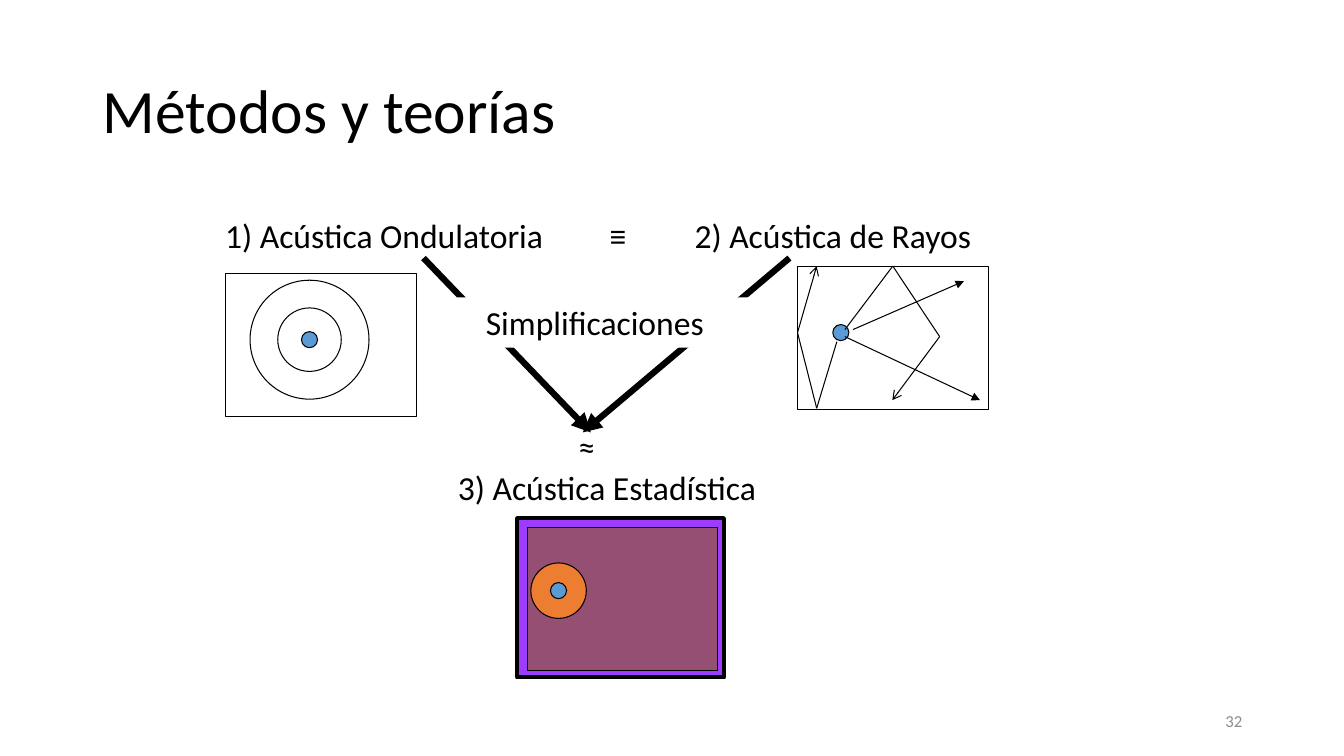
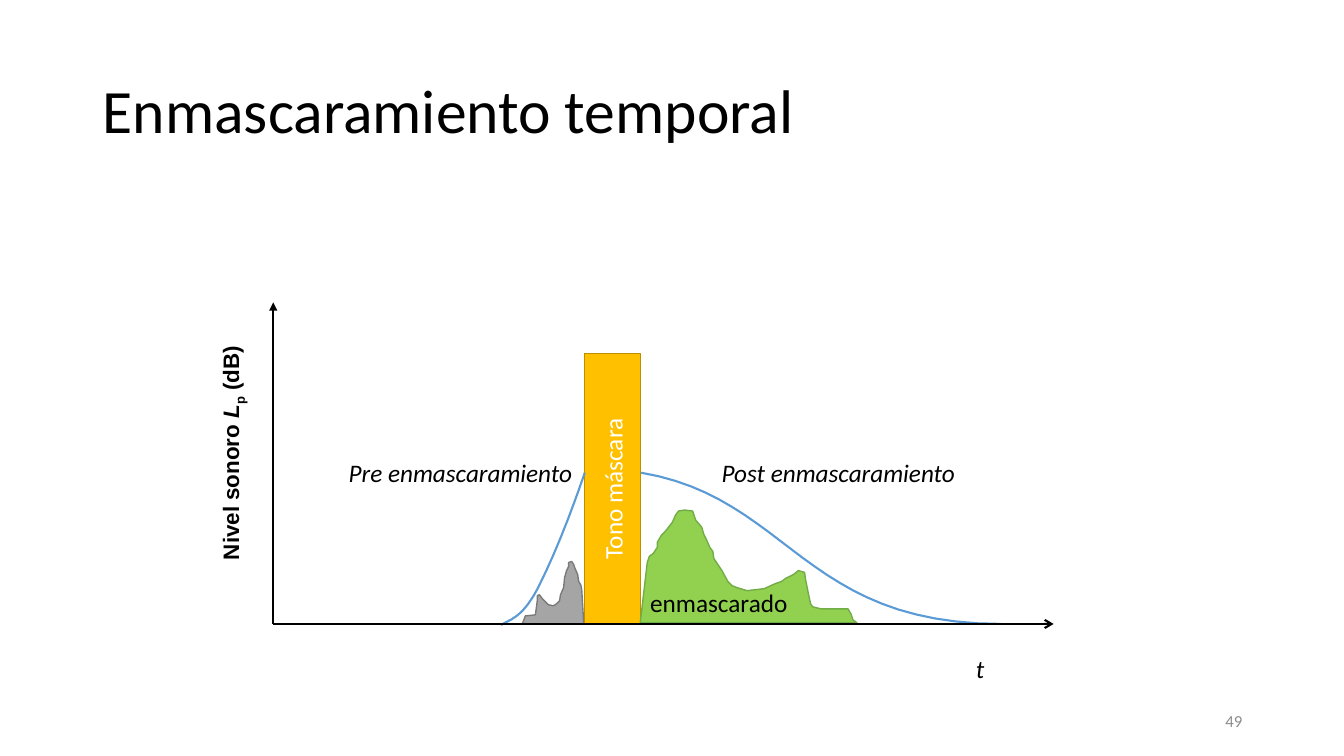
from dataclasses import dataclass

from lxml.etree import SubElement
from pptx import Presentation
from pptx.dml.color import RGBColor as RGB
from pptx.enum.shapes import MSO_CONNECTOR as CONN, MSO_SHAPE as SHAPE
from pptx.enum.text import MSO_ANCHOR as ANCHOR, PP_ALIGN as ALIGN
from pptx.oxml.ns import qn
from pptx.util import Inches, Pt


@dataclass(frozen=True)
class Theme:
    """Colours, fonts and type sizes shared by the slides."""
    black: str = "000000"
    white: str = "FFFFFF"
    muted: str = "8C8C8C"
    blue: str = "5B9BD5"
    purple: str = "9D3BFF"
    plum: str = "954F72"
    orange: str = "ED7D31"
    amber: str = "FFC000"
    amber_edge: str = "BD8E00"
    grey: str = "A5A5A5"
    grey_edge: str = "7A7A7A"
    green: str = "92D050"
    green_edge: str = "70AD47"
    font: str = "Calibri"
    axis_font: str = "Arial"
    title: int = 44
    heading: int = 24
    label: int = 18
    axis: int = 16
    footer: int = 12
    thin: float = 0.75
    edge: float = 1
    curve: float = 1.5
    frame: float = 3
    heavy: float = 4.5


T = Theme()
BOX = (1.89, 1.42)
DOT = 0.16

GREY_SOUND = [
    (5.77, 5.85), (5.76, 5.8), (5.74, 5.77), (5.73, 5.7), (5.7, 5.63),
    (5.69, 5.6), (5.67, 5.57), (5.64, 5.58), (5.64, 5.62), (5.62, 5.66),
    (5.6, 5.73), (5.59, 5.83), (5.56, 5.9), (5.55, 5.96), (5.52, 5.99),
    (5.49, 6.01), (5.44, 6), (5.41, 5.97), (5.38, 5.94), (5.35, 5.9),
    (5.33, 5.91), (5.33, 5.95), (5.32, 6.03), (5.31, 6.1), (5.21, 6.11),
    (5.2, 6.14), (5.18, 6.19), (5.79, 6.19)]
GREEN_SOUND = [
    (6.42, 5.58), (6.44, 5.52), (6.48, 5.49), (6.52, 5.43), (6.52, 5.38),
    (6.56, 5.31), (6.6, 5.27), (6.67, 5.18), (6.7, 5.11), (6.73, 5.07),
    (6.79, 5.06), (6.87, 5.07), (6.9, 5.16), (6.96, 5.23), (6.98, 5.3),
    (7.01, 5.36), (7.04, 5.43), (7.07, 5.47), (7.08, 5.54), (7.16, 5.66),
    (7.22, 5.77), (7.26, 5.81), (7.31, 5.83), (7.41, 5.86), (7.58, 5.84),
    (7.69, 5.79), (7.75, 5.77), (7.79, 5.74), (7.87, 5.7), (7.92, 5.66),
    (7.98, 5.68), (7.99, 5.75), (8.02, 5.9), (8.04, 5.99), (8.06, 6.02),
    (8.14, 6.04), (8.41, 6.04), (8.44, 6.09), (8.46, 6.15), (8.5, 6.18),
    (6.35, 6.18)]
PRE_CURVE = [(5.8, 4.69), (5.63, 5.19), (5.45, 5.62), (5.31, 5.88),
             (5.17, 6.13), (5.05, 6.15), (4.97, 6.2)]
POST_CURVE = [(6.36, 4.69), (7.83, 4.94), (7.97, 6.19), (9.93, 6.19)]


def assign(obj, values):
    """Set each named attribute on an object."""
    for name, value in values.items():
        setattr(obj, name, value)


def write(tf, runs, size, color=T.black, font=T.font, align=ALIGN.LEFT,
          anchor=ANCHOR.TOP, spacing=None, **fmt):
    """Write one paragraph of (text, format) runs, or a plain string."""
    assign(tf, {"word_wrap": True, "vertical_anchor": anchor})
    p = tf.paragraphs[0]
    assign(p, {"alignment": align, "line_spacing": spacing})
    for text, extra in [(runs, {})] if isinstance(runs, str) else runs:
        r = p.add_run()
        r.text = text
        values = {"name": font, "size": Pt(size), **fmt, **extra}
        baseline = values.pop("baseline", None)
        assign(r.font, values)
        r.font.color.rgb = RGB.from_string(color)
        if baseline:
            r._r.get_or_add_rPr().set("baseline", str(baseline))


def text(slide, at, runs, size, **fmt):
    """Add a text box."""
    sp = slide.shapes.add_textbox(*map(Inches, at))
    write(sp.text_frame, runs, size, **fmt)
    return sp


def paint(sp, fill=None, line=None, width=T.thin):
    """Give a shape its fill and outline, or none, and no shadow."""
    sp.shadow.inherit = False
    for part, color in ((sp.fill, fill), (sp.line.fill, line)):
        if color:
            part.solid()
            part.fore_color.rgb = RGB.from_string(color)
        else:
            part.background()
    if line:
        sp.line.width = Pt(width)
    return sp


def rect(slide, at, fill=None, line=T.black, width=T.thin):
    """Add a rectangle."""
    sp = slide.shapes.add_shape(SHAPE.RECTANGLE, *map(Inches, at))
    return paint(sp, fill, line, width)


def circle(slide, center, diameter, fill=None):
    """Add a thin-lined circle around a centre."""
    corner = [Inches(c - diameter / 2) for c in center]
    sp = slide.shapes.add_shape(SHAPE.OVAL, *corner, *[Inches(diameter)] * 2)
    return paint(sp, fill, T.black)


def line(slide, start, end, tail=None, width=T.thin):
    """Add a straight connector with an optional arrowhead at its end."""
    cx = slide.shapes.add_connector(CONN.STRAIGHT, *map(Inches, start + end))
    cx.line.color.rgb = RGB.from_string(T.black)
    cx.line.width = Pt(width)
    if tail:
        SubElement(cx.line._ln, qn("a:tailEnd"), type=tail)
    SubElement(cx._element.spPr, qn("a:effectLst"))
    return cx


def trace(slide, points, tail):
    """Chain connectors through points and put an arrowhead on the last."""
    last = len(points) - 2
    return [line(slide, a, b, tail if i == last else None)
            for i, (a, b) in enumerate(zip(points, points[1:]))]


def bezier(points, steps=24):
    """Sample a chain of cubic curves that share their end points."""
    out = [points[0]]
    for i in range(0, len(points) - 1, 3):
        for n in range(1, steps + 1):
            t = n / steps
            u = 1 - t
            weights = (u ** 3, 3 * u * u * t, 3 * u * t * t, t ** 3)
            out.append(tuple(sum(w * c for w, c in zip(weights, axis))
                             for axis in zip(*points[i:i + 4])))
    return out


def outline(slide, points, fill=None, line=T.blue, width=T.curve):
    """Add a freeform through points, closed when it is filled."""
    grid = [(x * 1000, y * 1000) for x, y in points]
    builder = slide.shapes.build_freeform(*grid[0], scale=Inches(1) / 1000)
    builder.add_line_segments(grid[1:], close=bool(fill))
    return paint(builder.convert_to_shape(), fill, line, width)


def new_slide(prs, title, number):
    """Add a slide with its title and page number."""
    slide = prs.slides.add_slide(prs.slide_layouts[5])
    sp = slide.shapes.title
    assign(sp, dict(zip(("left", "top", "width", "height"),
                        map(Inches, (0.92, 0.4, 11.5, 1.45)))))
    write(sp.text_frame, title, T.title, anchor=ANCHOR.MIDDLE, spacing=0.9)
    text(slide, (9.42, 6.95, 3, 0.4), number, T.footer, color=T.muted,
         align=ALIGN.RIGHT, anchor=ANCHOR.MIDDLE)
    return slide


def draw_waves(slide):
    """Draw the wave fronts around a source."""
    rect(slide, (2.24, 2.71, *BOX))
    for diameter, fill in ((1.18, None), (0.63, None), (DOT, T.blue)):
        circle(slide, (3.07, 3.37), diameter, fill)


def draw_rays(slide):
    """Draw the direct and reflected rays of a source."""
    box = rect(slide, (7.91, 2.64, *BOX))
    circle(slide, (8.34, 3.3), DOT, T.blue)
    up, down, _ = trace(slide, [(8.38, 3.27), (8.85, 2.64), (9.32, 3.34),
                                (8.85, 3.97)], "arrow")
    up.end_connect(box, 0)
    down.begin_connect(box, 0)
    trace(slide, [(8.3, 3.39), (8.1, 4.05), (7.91, 3.3), (8.1, 2.64)], "arrow")
    line(slide, (8.38, 3.34), (9.72, 3.97), "triangle")
    line(slide, (8.46, 3.27), (9.56, 2.79), "triangle")


def draw_statistics(slide):
    """Draw the diffuse field around a source."""
    rect(slide, (5.13, 5.14, 2.05, 1.58), T.purple, width=T.frame)
    rect(slide, (5.23, 5.23, *BOX), T.plum)
    for diameter, fill in ((0.55, T.orange), (DOT, T.blue)):
        circle(slide, (5.54, 5.86), diameter, fill)


def methods_slide(prs):
    """Build the slide on methods and theories."""
    slide = new_slide(prs, "Métodos y teorías", "32")
    for start, end in (((4.2, 2.56), (5.86, 4.29)),
                       ((7.83, 2.56), (5.78, 4.29))):
        line(slide, start, end, "triangle", T.heavy)
    sp = rect(slide, (4.13, 2.95, 3.54, 0.5), T.white, None)
    write(sp.text_frame, "Simplificaciones", T.heading, align=ALIGN.CENTER)
    for left, top, width, label in (
            (1.84, 2.08, 3.94, "1) Acústica Ondulatoria"),
            (6.49, 2.08, 3.54, "2) Acústica de Rayos"),
            (4.13, 4.58, 3.78, "3) Acústica Estadística"),
            (4.36, 2.08, 3.54, "≡"),
            (4.05, 4.18, 3.54, "≈")):
        text(slide, (left, top, width, 0.5), label, T.heading,
             align=ALIGN.CENTER)
    draw_waves(slide)
    draw_rays(slide)
    draw_statistics(slide)


def masking_slide(prs):
    """Build the slide on temporal masking."""
    slide = new_slide(prs, "Enmascaramiento temporal", "49")
    outline(slide, GREY_SOUND, T.grey, T.grey_edge, T.edge)
    mask = rect(slide, (5.8, 3.51, 0.55, 2.68), T.amber, T.amber_edge, T.edge)
    write(mask.text_frame, "Tono máscara", T.label, color=T.white,
          align=ALIGN.CENTER, anchor=ANCHOR.MIDDLE)
    mask.text_frame._txBody.bodyPr.set("vert", "vert270")
    for points in (PRE_CURVE, POST_CURVE):
        outline(slide, bezier(points))
    masked = outline(slide, GREEN_SOUND, T.green, T.green_edge, T.edge)
    write(masked.text_frame, "enmascarado", T.label, anchor=ANCHOR.BOTTOM)
    origin = (2.71, 6.19)
    line(slide, origin, (2.71, 3), "triangle", T.curve)
    line(slide, origin, (10.45, 6.19), "arrow", T.curve)
    for left, top, width, label in (
            (9.58, 6.43, 1.57, "t"),
            (7.06, 4.49, 2.88, "Post enmascaramiento"),
            (3.36, 4.49, 2.88, "Pre enmascaramiento")):
        text(slide, (left, top, width, 0.4), label, T.label, italic=True)
    level = text(slide, (0.8, 4.32, 2.99, 0.35),
                 [("Nivel sonoro ", {}), ("L", {"italic": True}),
                  ("p", {"baseline": -25000}), (" (dB)", {})],
                 T.axis, font=T.axis_font, align=ALIGN.CENTER, bold=True)
    level.rotation = 270
    assign(level.text_frame, {
        "margin_left": Inches(0.06), "margin_right": Inches(0.06),
        "margin_top": Inches(0.03), "margin_bottom": Inches(0.03)})


def main():
    """Build and save the presentation."""
    prs = Presentation()
    assign(prs, {"slide_width": Inches(13.33), "slide_height": Inches(7.5)})
    methods_slide(prs)
    masking_slide(prs)
    prs.save("out.pptx")


if __name__ == "__main__":
    main()
